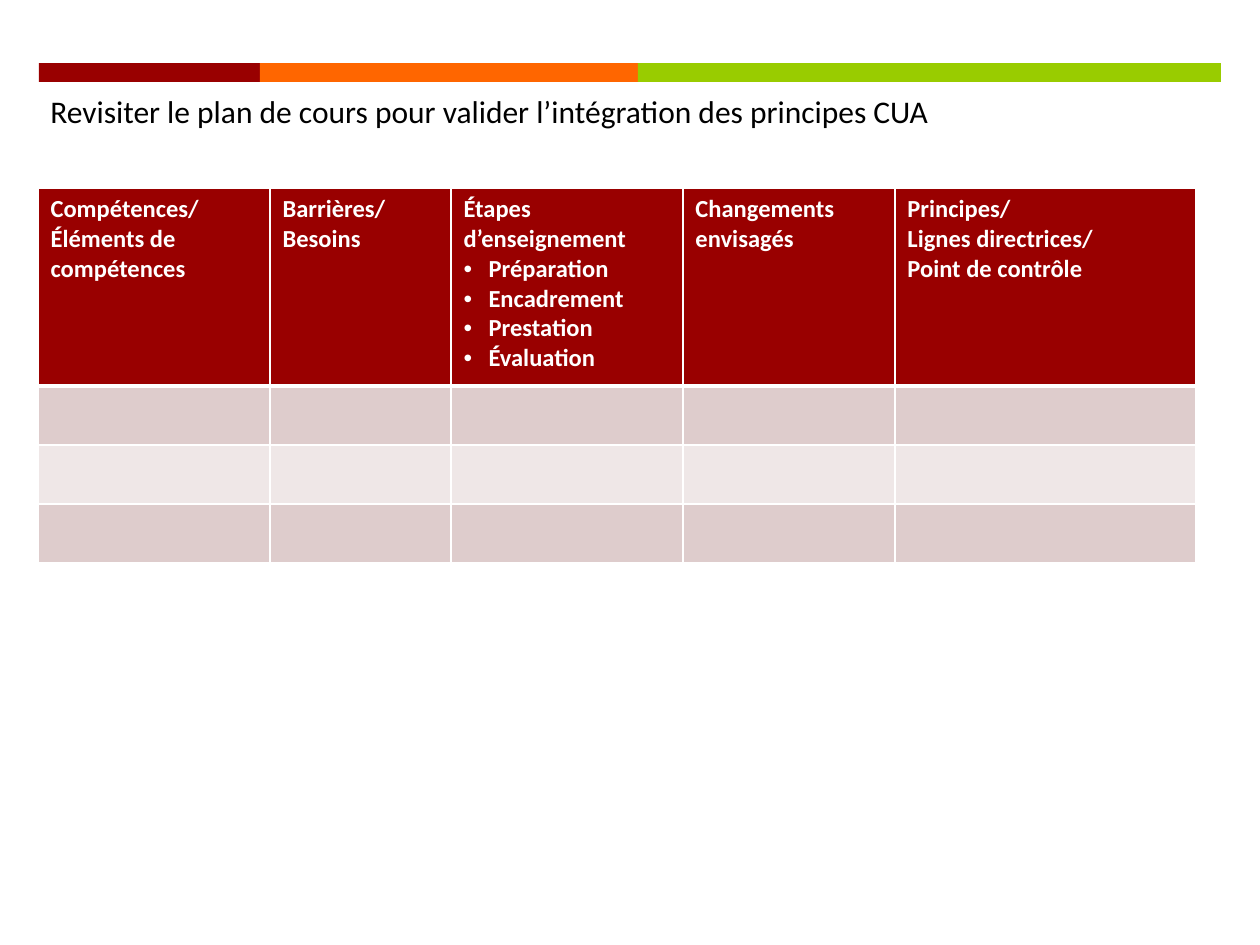
"""Build a course-plan review slide with a colour band, a title and a table."""
from copy import deepcopy
from dataclasses import dataclass

from lxml import etree
from pptx import Presentation
from pptx import util as u
from pptx.dml.color import RGBColor
from pptx.enum import shapes, text
from pptx.oxml import ns

PX_PER_INCH = 126


@dataclass(frozen=True)
class Theme:
    font: str = "Calibri"
    title_size: int = 18
    table_size: int = 14
    ink: str = "000000"
    white: str = "FFFFFF"
    red: str = "990000"
    orange: str = "FF6600"
    green: str = "99CC00"
    bands: tuple = ("DECCCC", "EFE7E7")
    thin: int = 1
    thick: int = 3


def px(length):
    return u.Emu(round(length * u.Inches(1) / PX_PER_INCH))


def write(paragraph, content, *, font, size, color, bold=False, bullet=None, indent=0):
    for index, line in enumerate(content.split("\n")):
        if index:
            paragraph.add_line_break()
        run = paragraph.add_run()
        run.text = line
        run.font.name = font
        run.font.size = u.Pt(size)
        run.font.bold = bold
        run.font.color.rgb = RGBColor.from_string(color)
    for line_break in paragraph._p.findall(ns.qn("a:br")):
        line_break.append(deepcopy(paragraph.runs[0]._r.rPr))
    if bullet:
        properties = paragraph._p.get_or_add_pPr()
        properties.set("marL", str(px(indent)))
        properties.set("indent", str(-px(indent)))
        etree.SubElement(properties, ns.qn("a:buFont"), typeface="Arial")
        etree.SubElement(properties, ns.qn("a:buChar"), char=bullet)


class SlideBuilder:
    def __init__(self, slide, theme):
        self.slide = slide
        self.theme = theme

    def bar(self, left, top, width, height, color):
        shape = self.slide.shapes.add_shape(
            shapes.MSO_SHAPE.RECTANGLE, px(left), px(top), px(width), px(height))
        shape.shadow.inherit = False
        shape.fill.solid()
        shape.fill.fore_color.rgb = RGBColor.from_string(color)
        shape.line.fill.background()

    def title(self, left, top, width, height, content):
        box = self.slide.shapes.add_textbox(px(left), px(top), px(width), px(height))
        frame = box.text_frame
        frame.word_wrap = True
        frame.auto_size = text.MSO_AUTO_SIZE.SHAPE_TO_FIT_TEXT
        write(frame.paragraphs[0], content, font=self.theme.font,
              size=self.theme.title_size, color=self.theme.ink)

    def borders(self, cell, top, bottom):
        properties = cell._tc.get_or_add_tcPr()
        thin = self.theme.thin
        sides = (("L", thin), ("R", thin), ("T", top), ("B", bottom))
        for index, (side, width) in enumerate(sides):
            line = etree.Element(ns.qn(f"a:ln{side}"), w=str(u.Pt(width)))
            fill = etree.SubElement(line, ns.qn("a:solidFill"))
            etree.SubElement(fill, ns.qn("a:srgbClr"), val=self.theme.white)
            properties.insert(index, line)

    def header(self, cell, lines):
        for index, line in enumerate(lines):
            frame = cell.text_frame
            paragraph = frame.add_paragraph() if index else frame.paragraphs[0]
            bullet = "•" if line.startswith("•") else None
            write(paragraph, line.removeprefix("•"), font=self.theme.font,
                  size=self.theme.table_size, color=self.theme.white,
                  bold=True, bullet=bullet, indent=25)

    def table(self, left, top, columns, rows, headers):
        frame = self.slide.shapes.add_table(
            len(rows), len(columns), px(left), px(top), px(sum(columns)), px(sum(rows)))
        table = frame.table
        table.first_row = False
        table.horz_banding = False
        for column, width in zip(table.columns, columns):
            column.width = px(width)
        for number, (row, height) in enumerate(zip(table.rows, rows)):
            row.height = px(height)
            color = self.theme.bands[(number - 1) % 2] if number else self.theme.red
            upper = self.theme.thick if number == 1 else self.theme.thin
            lower = self.theme.thick if number == 0 else self.theme.thin
            for cell in row.cells:
                cell.fill.solid()
                cell.fill.fore_color.rgb = RGBColor.from_string(color)
                self.borders(cell, upper, lower)
        for cell, lines in zip(table.rows[0].cells, headers):
            self.header(cell, lines)


def main():
    presentation = Presentation()
    presentation.slide_width = u.Inches(10)
    presentation.slide_height = u.Inches(7.5)
    theme = Theme()
    builder = SlideBuilder(
        presentation.slides.add_slide(presentation.slide_layouts[6]), theme)

    left = 39
    for width, color in ((221, theme.red), (378, theme.orange), (583, theme.green)):
        builder.bar(left, 63, width, 19, color)
        left += width

    builder.table(
        38, 188,
        columns=(232, 181, 232, 212, 301),
        rows=(198, 59, 59, 59),
        headers=(
            ["Compétences/\nÉléments de compétences"],
            ["Barrières/Besoins"],
            ["Étapes d’enseignement", "•Préparation", "•Encadrement",
             "•Prestation", "•Évaluation"],
            ["Changements envisagés"],
            ["Principes/", "Lignes directrices/", "Point de contrôle"],
        ))
    builder.title(38, 86, 1187, 50,
                  "Revisiter le plan de cours pour valider l’intégration des principes CUA")
    presentation.save("out.pptx")


if __name__ == "__main__":
    main()
